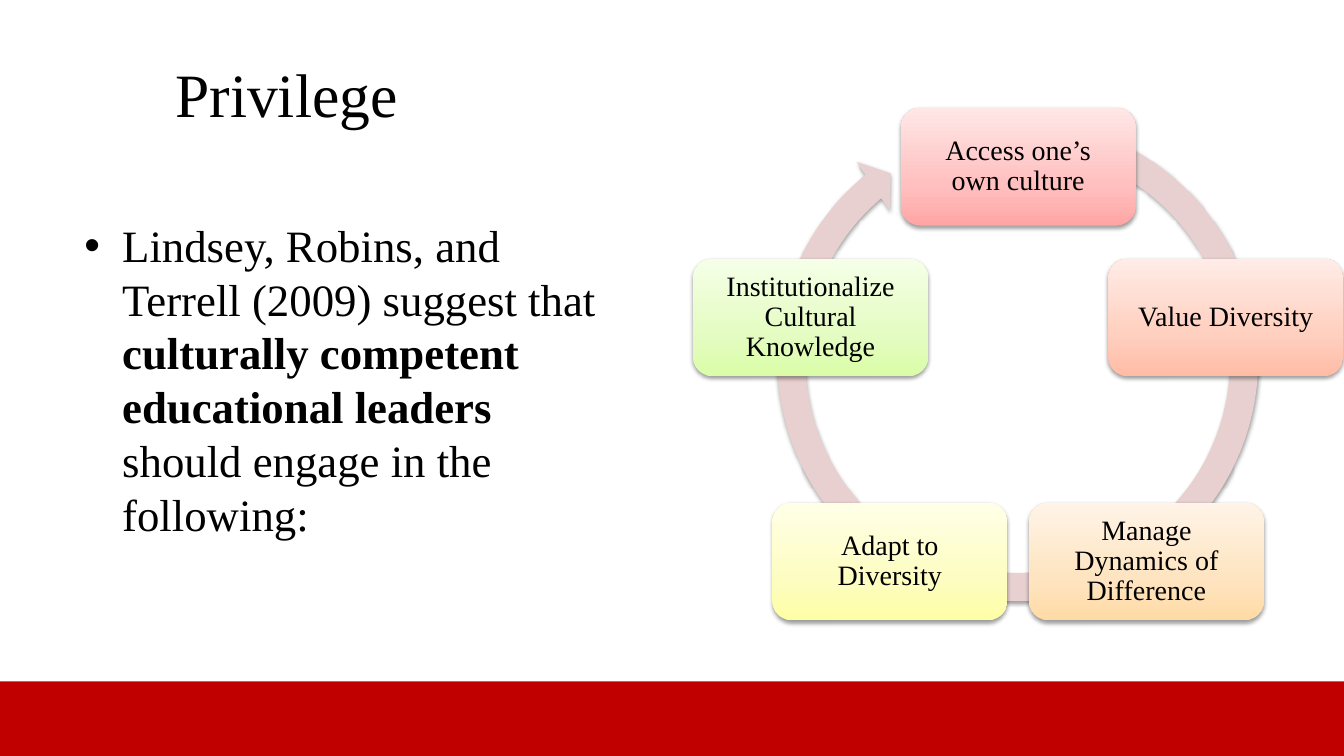
from math import cos, radians, sin
from typing import NamedTuple

from lxml.etree import SubElement
from pptx import Presentation
from pptx.dml.color import RGBColor
from pptx.enum.shapes import MSO_SHAPE as Preset
from pptx.enum.text import MSO_ANCHOR as Anchor, PP_ALIGN as Align
from pptx.oxml.ns import qn
from pptx.shapes.autoshape import Shape
from pptx.slide import Slide
from pptx.text.text import TextFrame
from pptx.util import Cm, Pt

FONT = "Times New Roman"
BLACK = RGBColor(0x00, 0x00, 0x00)
BAND_RED = RGBColor(0xC0, 0x00, 0x00)
RING_PINK = RGBColor(0xE8, 0xD0, 0xD0)

# Cycle geometry in centimetres
CENTRE_X, CENTRE_Y, RADIUS = 25.66, 9.7, 5.5
STEP_WIDTH, STEP_HEIGHT = 5.92, 2.97
STOP_POSITIONS = (0, 35, 100)


class Step(NamedTuple):
    label: str
    shades: tuple[RGBColor, RGBColor, RGBColor]


def shades(*codes: str) -> tuple[RGBColor, ...]:
    return tuple(RGBColor.from_string(code) for code in codes)


STEPS = [
    Step("Access one’s own culture", shades("FFA6A5", "FFC0BF", "FFE7E7")),
    Step("Value Diversity", shades("FFBCA5", "FFCFBF", "FFECE7")),
    Step("Manage Dynamics of Difference", shades("FFDAA5", "FEE4C0", "FFF4E7")),
    Step("Adapt to Diversity", shades("FEFEA6", "FDFDC1", "FFFFE7")),
    Step("Institutionalize Cultural Knowledge", shades("DAFDA7", "E4FCC2", "F5FFE7")),
]


def add_preset(slide: Slide, preset: Preset, left: float, top: float,
               width: float, height: float) -> Shape:
    shape = slide.shapes.add_shape(preset, Cm(left), Cm(top), Cm(width), Cm(height))
    shape.shadow.inherit = False
    shape.line.fill.background()
    return shape


def add_soft_shadow(shape: Shape) -> None:
    effects = shape._element.spPr.find(qn("a:effectLst"))
    shadow = SubElement(effects, qn("a:outerShdw"), blurRad="40000", dist="20000",
                        dir="5400000", rotWithShape="0")
    black = SubElement(shadow, qn("a:srgbClr"), val=str(BLACK))
    SubElement(black, qn("a:alpha"), val="38000")


def fill_gradient(shape: Shape, colours: tuple[RGBColor, ...]) -> None:
    shape.fill.gradient()
    shape.fill.gradient_angle = 90
    stops = shape._element.spPr.find(qn("a:gradFill")).find(qn("a:gsLst"))
    for stop in list(stops):
        stops.remove(stop)
    for position, colour in zip(STOP_POSITIONS, colours):
        stop = SubElement(stops, qn("a:gs"), pos=str(position * 1000))
        SubElement(stop, qn("a:srgbClr"), val=str(colour))


def write(frame: TextFrame, size: int, align: Align, anchor: Anchor,
          *runs: tuple[str, bool]) -> None:
    frame.word_wrap = True
    frame.vertical_anchor = anchor
    paragraph = frame.paragraphs[0]
    paragraph.alignment = align
    for text, bold in runs:
        run = paragraph.add_run()
        run.text = text
        font_format = {"name": FONT, "size": Pt(size), "bold": bold}
        for attribute, value in font_format.items():
            setattr(run.font, attribute, value)
        run.font.color.rgb = BLACK


def add_step(slide: Slide, step: Step, angle: float) -> None:
    left = CENTRE_X + RADIUS * sin(angle) - STEP_WIDTH / 2
    top = CENTRE_Y - RADIUS * cos(angle) - STEP_HEIGHT / 2
    card = add_preset(slide, Preset.ROUNDED_RECTANGLE, left, top, STEP_WIDTH, STEP_HEIGHT)
    fill_gradient(card, step.shades)
    add_soft_shadow(card)
    for side in ("left", "top", "right", "bottom"):
        setattr(card.text_frame, f"margin_{side}", Cm(0.35))
    write(card.text_frame, 20, Align.CENTER, Anchor.MIDDLE, (step.label, False))
    card.text_frame.paragraphs[0].line_spacing = 0.9


def main() -> None:
    deck = Presentation()
    deck.slide_width, deck.slide_height = Cm(33.87), Cm(19.05)
    slide = deck.slides.add_slide(deck.slide_layouts[6])

    # Title
    title = slide.shapes.add_textbox(Cm(1.7), Cm(0.76), Cm(11.05), Cm(3.18))
    write(title.text_frame, 44, Align.CENTER, Anchor.MIDDLE, ("Privilege", False))

    # Bulleted statement
    statement = slide.shapes.add_textbox(Cm(1.88), Cm(5.36), Cm(13.69), Cm(3.91))
    bullet = statement.text_frame.paragraphs[0]._p.get_or_add_pPr()
    bullet.set("marL", str(Cm(0.95)))
    bullet.set("indent", str(Cm(-0.95)))
    SubElement(bullet, qn("a:buFont"), typeface="Arial")
    SubElement(bullet, qn("a:buChar"), char="•")
    write(statement.text_frame, 32, Align.LEFT, Anchor.TOP,
          ("Lindsey, Robins, and Terrell (2009) suggest that ", False),
          ("culturally competent educational leaders ", True),
          ("should engage in the following:", False))

    # Bottom band
    band = add_preset(slide, Preset.RECTANGLE, 0, 17.17, 33.87, 1.88)
    band.fill.solid()
    band.fill.fore_color.rgb = BAND_RED

    # Ring arrow behind the steps
    ring = add_preset(slide, Preset.CIRCULAR_ARROW, 19.2, 2.64, 12.9, 12.9)
    ring.fill.solid()
    ring.fill.fore_color.rgb = RING_PINK
    add_soft_shadow(ring)
    for index, value in enumerate((0.055, 3.31, 138.2, 173.59, 0.058)):
        ring.adjustments[index] = value

    # Steps, clockwise from the top
    for index, step in enumerate(STEPS):
        add_step(slide, step, radians(360 / len(STEPS) * index))

    deck.save("out.pptx")


if __name__ == "__main__":
    main()
